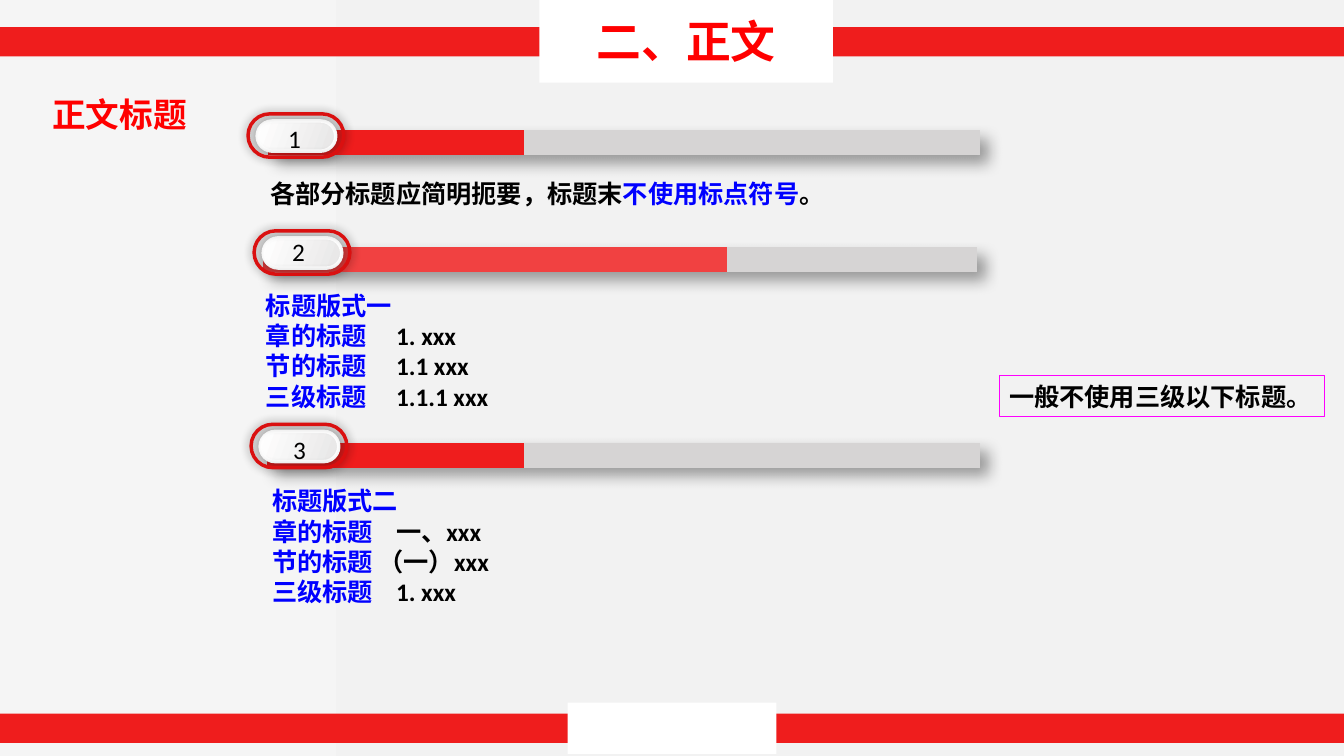
from lxml.etree import SubElement
from pptx import Presentation
from pptx.dml.color import RGBColor
from pptx.enum.shapes import MSO_SHAPE as Shape
from pptx.enum.text import MSO_ANCHOR as Anchor, MSO_AUTO_SIZE as AutoSize, PP_ALIGN as Align
from pptx.oxml.ns import qn
from pptx.util import Inches, Pt

WIDTH, HEIGHT = 13.33, 7.5
HAN, LATIN = "Noto Sans CJK SC", "Calibri"
RED, BRIGHT, SOFT_RED, RIM = "EF1D1D", "FF0000", "F14141", "DA1010"
GREY, WHITE, BLACK, BLUE, PINK = "D6D4D4", "FFFFFF", "000000", "0000FF", "FF00FF"
BAR_SHADOW = dict(alpha=37, blur=11, dist=8)
KNOB_SHADOW = dict(alpha=41, blur=7, dist=0)

# Bar box left, top, width; filled share; colour; rim left, top; number left, top
SECTIONS = [
    ((2.66, 1.29, 7.06), 0.36, RED, (2.46, 1.13), (2.76, 1.17)),
    ((2.61, 2.45, 7.08), 0.65, SOFT_RED, (2.52, 2.29), (2.8, 2.3)),
    ((2.65, 4.39, 7.07), 0.36, RED, (2.49, 4.21), (2.81, 4.26)),
]
RULE = [[("各部分标题应简明扼要，标题末", BLACK), ("不使用标点符号", BLUE), ("。", BLACK)]]


def color(hex_code):
    return RGBColor.from_string(hex_code)


def set_gradient(fill, stops, angle=0):
    """Fill with two (position, colour) stops, the angle running clockwise."""
    fill.gradient()
    fill.gradient_angle = -angle % 360
    for stop, (position, hex_code) in zip(fill.gradient_stops, stops):
        stop.position = position
        stop.color.rgb = color(hex_code)


def add_shadow(shape, alpha, blur, dist):
    effects = shape._element.spPr.find(qn("a:effectLst"))
    outer = SubElement(effects, qn("a:outerShdw"), blurRad=str(Pt(blur)), dist=str(Pt(dist)),
                       dir=str(45 * 60000), algn="tl", rotWithShape="0")
    tint = SubElement(outer, qn("a:srgbClr"), val=BLACK)
    SubElement(tint, qn("a:alpha"), val=str(alpha * 1000))


def add_box(shapes, box, kind=Shape.RECTANGLE, fill=None, line=None, weight=2.5, shadow=None):
    shape = shapes.add_shape(kind, *map(Inches, box))
    shape.shadow.inherit = False
    if fill:
        shape.fill.solid()
        shape.fill.fore_color.rgb = color(fill)
    else:
        shape.fill.background()
    if line:
        shape.line.color.rgb = color(line)
        shape.line.width = Pt(weight)
    else:
        shape.line.fill.background()
    if shadow:
        add_shadow(shape, **shadow)
    return shape


def write(shape, lines, size=18, bold=True, font=LATIN, align=Align.LEFT, spacing=None, tab=None):
    """Write lines of (text, colour) runs, with an optional tab stop in inches."""
    frame = shape.text_frame
    for index, line in enumerate(lines):
        paragraph = frame.paragraphs[0] if index == 0 else frame.add_paragraph()
        paragraph.alignment = align
        if spacing:
            paragraph.line_spacing = spacing
        if tab:
            stops = SubElement(paragraph._p.get_or_add_pPr(), qn("a:tabLst"))
            SubElement(stops, qn("a:tab"), pos=str(Inches(tab)), algn="l")
        for text, hex_code in line:
            run = paragraph.add_run()
            run.text = text
            for name, value in dict(size=Pt(size), bold=bold, name=font).items():
                setattr(run.font, name, value)
            run.font.color.rgb = color(hex_code)
            SubElement(run._r.get_or_add_rPr(), qn("a:ea"), typeface=HAN)


def add_text(shapes, box, lines, **style):
    label = shapes.add_textbox(*map(Inches, box))
    label.text_frame.word_wrap = True
    label.text_frame.auto_size = AutoSize.SHAPE_TO_FIT_TEXT
    write(label, lines, **style)


def add_bar(shapes, box, share, hex_code):
    bar = add_box(shapes, (*box, 0.25), shadow=BAR_SHADOW)
    set_gradient(bar.fill, [(share, hex_code), (share, GREY)])


def add_badge(shapes, left, top):
    badge = shapes.add_group_shape().shapes
    knob = add_box(badge, (left + 0.09, top + 0.07, 0.78, 0.3), Shape.ROUNDED_RECTANGLE,
                   line=WHITE, shadow=KNOB_SHADOW)
    set_gradient(knob.fill, [(0, WHITE), (1, "E7E6E6")], angle=20)
    rim = add_box(badge, (left, top, 0.95, 0.43), Shape.ROUNDED_RECTANGLE,
                  line=RIM, shadow=KNOB_SHADOW)
    for pill in (knob, rim):
        pill.adjustments[0] = 0.5


def add_band(shapes, top, plate_box):
    """Add a full-width red band with a white plate, and return the plate."""
    add_box(shapes, (-0.23, top, WIDTH + 0.46, 0.29), fill=RED)
    return add_box(shapes, plate_box, fill=WHITE)


def heading_levels(title, *levels):
    return [[(title, BLUE)]] + [[(name, BLUE), (sample, BLACK)] for name, sample in levels]


def main():
    deck = Presentation()
    deck.slide_width, deck.slide_height = Inches(WIDTH), Inches(HEIGHT)
    slide = deck.slides.add_slide(deck.slide_layouts[6])
    set_gradient(slide.background.fill, [(0, "F5F5F5"), (0.5, "F2F2F2")])
    shapes = slide.shapes

    title = add_band(shapes, 0.27, (5.35, -0.01, 2.91, 0.83))
    title.text_frame.vertical_anchor = Anchor.MIDDLE
    write(title, [[("二、正文", BRIGHT)]], size=32, font=HAN, align=Align.CENTER)
    add_band(shapes, 7.08, (5.63, 6.97, 2.07, 0.51))

    for number, (bar, share, hex_code, rim, digit) in enumerate(SECTIONS, 1):
        add_bar(shapes, bar, share, hex_code)
        add_badge(shapes, *rim)
        add_text(shapes, (*digit, 0.54, 0.4), [[(str(number), BLACK)]], bold=False)

    add_text(shapes, (0.42, 0.68, 2.56, 0.64), [[("正文标题", BRIGHT)]],
             size=24, font=HAN, spacing=1.5)
    add_text(shapes, (2.58, 1.72, 7.27, 0.4), RULE)
    add_text(shapes, (2.54, 2.83, 7.43, 1.31), heading_levels(
        "标题版式一", ("章的标题", "\t1. xxx"), ("节的标题", "\t1.1 xxx"),
        ("三级标题", "\t1.1.1 xxx")), tab=1.29)
    add_text(shapes, (2.6, 4.77, 6.67, 1.31), heading_levels(
        "标题版式二", ("章的标题", "\t一、xxx"), ("节的标题 ", "（一）xxx"),
        ("三级标题", "\t1. xxx")), tab=1.23)

    note = add_box(shapes, (9.91, 3.73, 3.23, 0.4), line=PINK, weight=0.75)
    note.text_frame.word_wrap = False
    note.text_frame.auto_size = AutoSize.SHAPE_TO_FIT_TEXT
    write(note, [[("一般不使用三级以下标题。", BLACK)]])

    deck.save("out.pptx")


if __name__ == "__main__":
    main()
